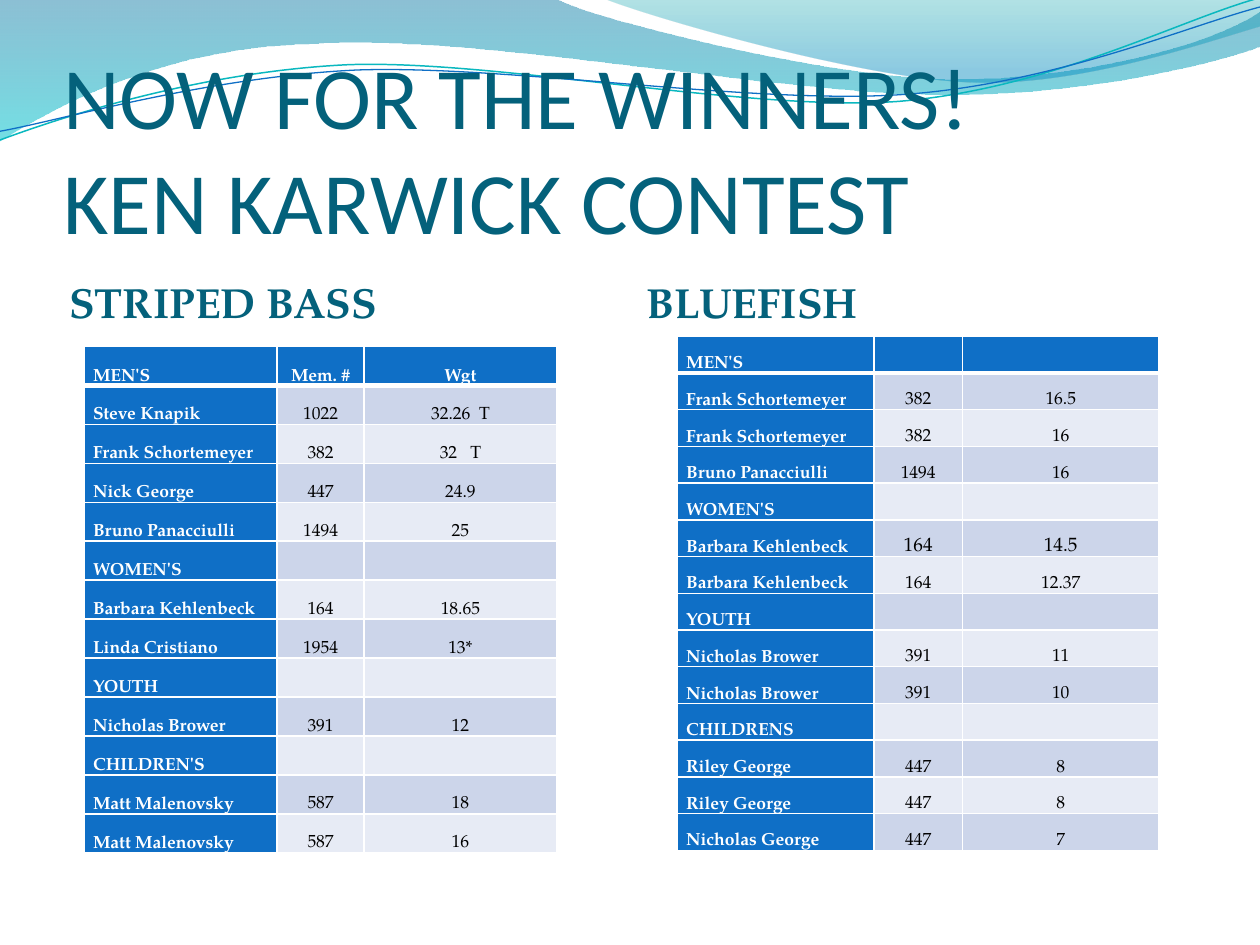
from lxml.etree import SubElement
from pptx import Presentation
from pptx.dml.color import RGBColor
from pptx.enum.text import MSO_ANCHOR, MSO_AUTO_SIZE, PP_ALIGN
from pptx.oxml.ns import qn
from pptx.util import Pt

BODY_FONT = "TeX Gyre Pagella"
TITLE_FONT = "Calibri"
TEAL, BLUE, WHITE, BLACK = "04617B", "0F6FC6", "FFFFFF", "000000"
BANDS = ("E7EBF5", "CCD5EA")

# Wave outlines in points: a pair is a corner, six numbers are a Bezier curve
LEFT_WAVE = [(0, 0), (317, -1), (343, 12, 478, 45, 546, 45), (614, 45, 690, 27, 720, 6.5),
             (721, 26), (708, 32, 626, 55, 537, 54), (447, 54, 275, 20, 185, 24.5),
             (93, 26, 33, 60, -1, 81), (0, 0)]
RIGHT_WAVE = [(345, -1), (366, 8, 491, 45, 554, 47), (616, 50, 692, 23, 720, 15),
              (720, 0), (345, -1)]
TEAL_LINE = [(0, 80), (35, 67, 114, 41, 199, 37), (284, 34, 427, 64, 513, 58),
             (600, 51, 675, 11, 719, -1)]
BLUE_LINE = [(0, 75), (34, 69, 118, 44, 204, 40), (290, 37, 430, 60, 516, 54),
             (602, 48, 678, 15, 720, 4)]

STRIPED_BASS = [
    ("MEN'S", "Mem. #", "Wgt"),
    ("Steve Knapik", "1022", "32.26  T"),
    ("Frank Schortemeyer", "382", "32   T"),
    ("Nick George", "447", "24.9"),
    ("Bruno Panacciulli", "1494", "25"),
    ("WOMEN'S", "", ""),
    ("Barbara Kehlenbeck", "164", "18.65"),
    ("Linda Cristiano", "1954", "13*"),
    ("YOUTH", "", ""),
    ("Nicholas Brower", "391", "12"),
    ("CHILDREN'S", "", ""),
    ("Matt Malenovsky", "587", "18"),
    ("Matt Malenovsky", "587", "16"),
]
BLUEFISH = [
    ("MEN'S", "", ""),
    ("Frank Schortemeyer", "382", "16.5"),
    ("Frank Schortemeyer", "382", "16"),
    ("Bruno Panacciulli", "1494", "16"),
    ("WOMEN'S", "", ""),
    ("Barbara Kehlenbeck", "164", "14.5"),
    ("Barbara Kehlenbeck", "164", "12.37"),
    ("YOUTH", "", ""),
    ("Nicholas Brower", "391", "11"),
    ("Nicholas Brower", "391", "10"),
    ("CHILDRENS", "", ""),
    ("Riley George", "447", "8"),
    ("Riley George", "447", "8"),
    ("Nicholas George", "447", "7"),
]


def color(value):
    return RGBColor.from_string(value)


def format_runs(paragraph, font, size, value, bold=False):
    for run in paragraph.runs:
        run.font.name = font
        run.font.size = Pt(size)
        run.font.bold = bold
        run.font.color.rgb = color(value)


def set_margins(frame, left, top, right, bottom):
    frame.margin_left, frame.margin_top = Pt(left), Pt(top)
    frame.margin_right, frame.margin_bottom = Pt(right), Pt(bottom)


def add_outline(slide, outline, close):
    points = [(Pt(segment[i]), Pt(segment[i + 1]))
              for segment in outline for i in range(0, len(segment), 2)]
    builder = slide.shapes.build_freeform(*points[0])
    builder.add_line_segments(points[1:], close=close)
    shape = builder.convert_to_shape()
    shape.shadow.inherit = False
    # Join each three points of a curve into one Bezier segment
    lines = iter(list(shape.element.iter(qn("a:lnTo"))))
    for segment in outline[1:]:
        line = next(lines)
        if len(segment) == 6:
            line.tag = qn("a:cubicBezTo")
            for extra in (next(lines), next(lines)):
                line.append(extra[0])
                extra.getparent().remove(extra)
    return shape


def add_wave(slide, outline, stops):
    shape = add_outline(slide, outline, True)
    shape.line.fill.background()
    shape.fill.gradient()
    shape.fill.gradient_angle = 270
    for stop, (position, value, _) in zip(shape.fill.gradient_stops, stops):
        stop.position = position
        stop.color.rgb = color(value)
    for element, (_, _, opacity) in zip(shape.element.iter(qn("a:gs")), stops):
        SubElement(element[0], qn("a:alpha"), val=str(opacity * 1000))


def add_wave_line(slide, outline, value, width):
    shape = add_outline(slide, outline, False)
    shape.fill.background()
    shape.line.color.rgb = color(value)
    shape.line.width = Pt(width)


def add_header_waves(slide):
    add_wave(slide, LEFT_WAVE, [(0, "0074A1", 45), (1, "00C6CF", 55)])
    add_wave(slide, RIGHT_WAVE, [(0, "00A1A9", 30), (0.8, "008BBF", 45)])
    add_wave_line(slide, TEAL_LINE, "0AB8BF", 0.85)
    add_wave_line(slide, BLUE_LINE, BLUE, 0.75)


def place_title(slide, left, top, width, height):
    title = slide.shapes.title
    title.left, title.top, title.width, title.height = Pt(left), Pt(top), Pt(width), Pt(height)
    frame = title.text_frame
    frame.text = "NOW FOR THE WINNERS!\vKEN KARWICK CONTEST"
    frame.auto_size = MSO_AUTO_SIZE.NONE
    frame.vertical_anchor = MSO_ANCHOR.BOTTOM
    set_margins(frame, 0, 3.6, 0, 0)
    frame.paragraphs[0].alignment = PP_ALIGN.LEFT
    format_runs(frame.paragraphs[0], TITLE_FONT, 50, TEAL)
    # Bring the title in front of the waves
    title.element.getparent().append(title.element)


def add_heading(slide, text, left, top, width, height):
    box = slide.shapes.add_textbox(Pt(left), Pt(top), Pt(width), Pt(height))
    frame = box.text_frame
    frame.word_wrap = True
    frame.vertical_anchor = MSO_ANCHOR.MIDDLE
    set_margins(frame, 3.6, 0, 3.6, 0)
    frame.text = text
    format_runs(frame.paragraphs[0], BODY_FONT, 24, TEAL, True)


def set_borders(cell, widths):
    properties = cell._tc.get_or_add_tcPr()
    for side, width in zip(("L", "R", "T", "B"), widths):
        line = SubElement(properties, qn(f"a:ln{side}"), w=str(Pt(width)))
        fill = SubElement(line, qn("a:solidFill"))
        SubElement(fill, qn("a:srgbClr"), val=WHITE)


def fill_cell(cell, text, row, column, size):
    is_header = row == 0 or column == 0
    set_borders(cell, (1, 1, 3 if row == 1 else 1, 3 if row == 0 else 1))
    cell.fill.solid()
    cell.fill.fore_color.rgb = color(BLUE if is_header else BANDS[row % 2])
    cell.vertical_anchor = MSO_ANCHOR.BOTTOM
    set_margins(cell, 5, 0, 5, 0)
    paragraph = cell.text_frame.paragraphs[0]
    if not text:
        # Keep the empty line small enough for the row
        SubElement(paragraph._p, qn("a:endParaRPr"), sz=str(size * 100))
        return
    paragraph.text = text
    paragraph.line_spacing = 1.15
    paragraph.alignment = PP_ALIGN.CENTER if column else PP_ALIGN.LEFT
    format_runs(paragraph, BODY_FONT, size, WHITE if is_header else BLACK, is_header)


def add_results(slide, results, left, top, width, height, large_row=None):
    frame = slide.shapes.add_table(len(results), 3, Pt(left), Pt(top), Pt(width), Pt(height))
    table = frame.table
    for column, share in zip(table.columns, (0.408, 0.184, 0.408)):
        column.width = Pt(width * share)
    for row, values in enumerate(results):
        table.rows[row].height = Pt(height / len(results))
        for column, text in enumerate(values):
            size = 11 if row == large_row and column else 10
            fill_cell(table.cell(row, column), text, row, column, size)


def main():
    presentation = Presentation()
    presentation.slide_width, presentation.slide_height = Pt(720), Pt(540)
    slide = presentation.slides.add_slide(presentation.slide_layouts[5])
    add_header_waves(slide)
    place_title(slide, 36, 18, 648, 126)
    add_heading(slide, "STRIPED BASS", 36, 146.2, 318, 52)
    add_heading(slide, "BLUEFISH", 365.8, 146.2, 318, 52)
    add_results(slide, STRIPED_BASS, 48.2, 198, 270, 289.4)
    add_results(slide, BLUEFISH, 387.1, 192.2, 275.2, 293.7, large_row=5)
    presentation.save("out.pptx")


if __name__ == "__main__":
    main()
